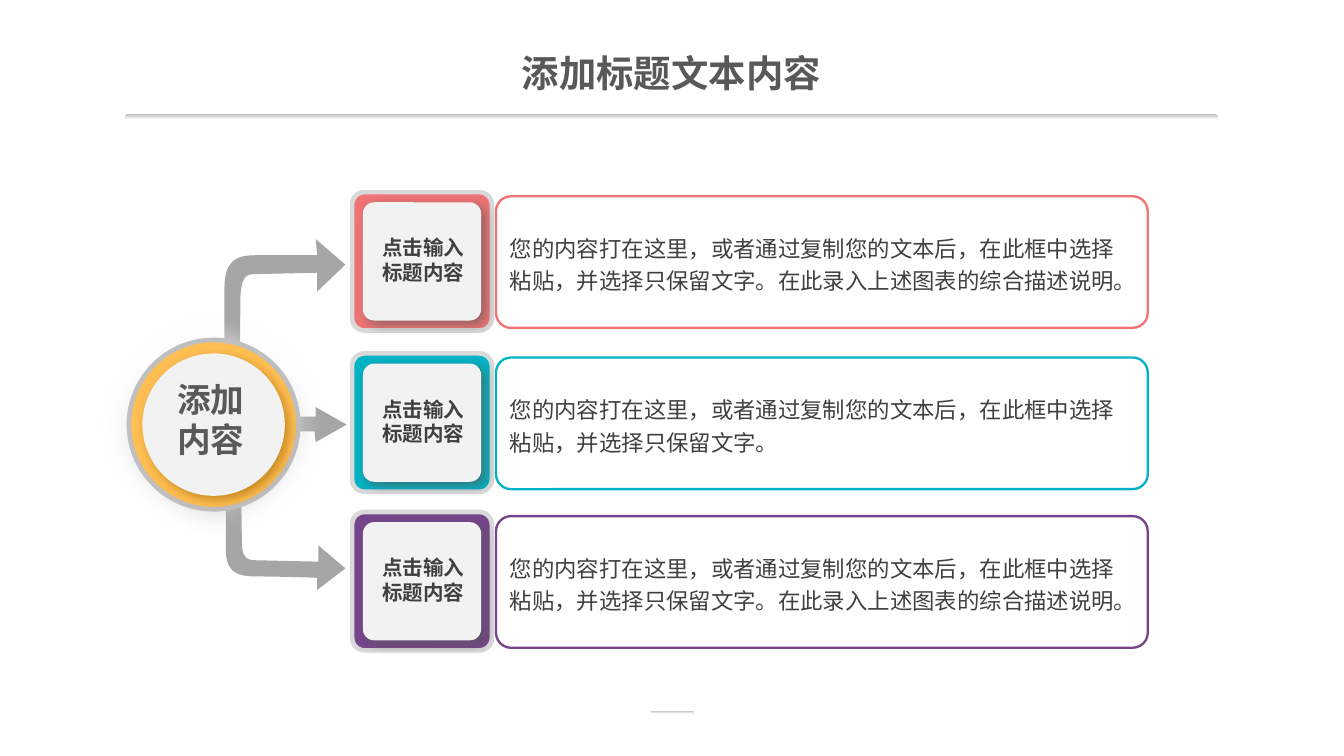
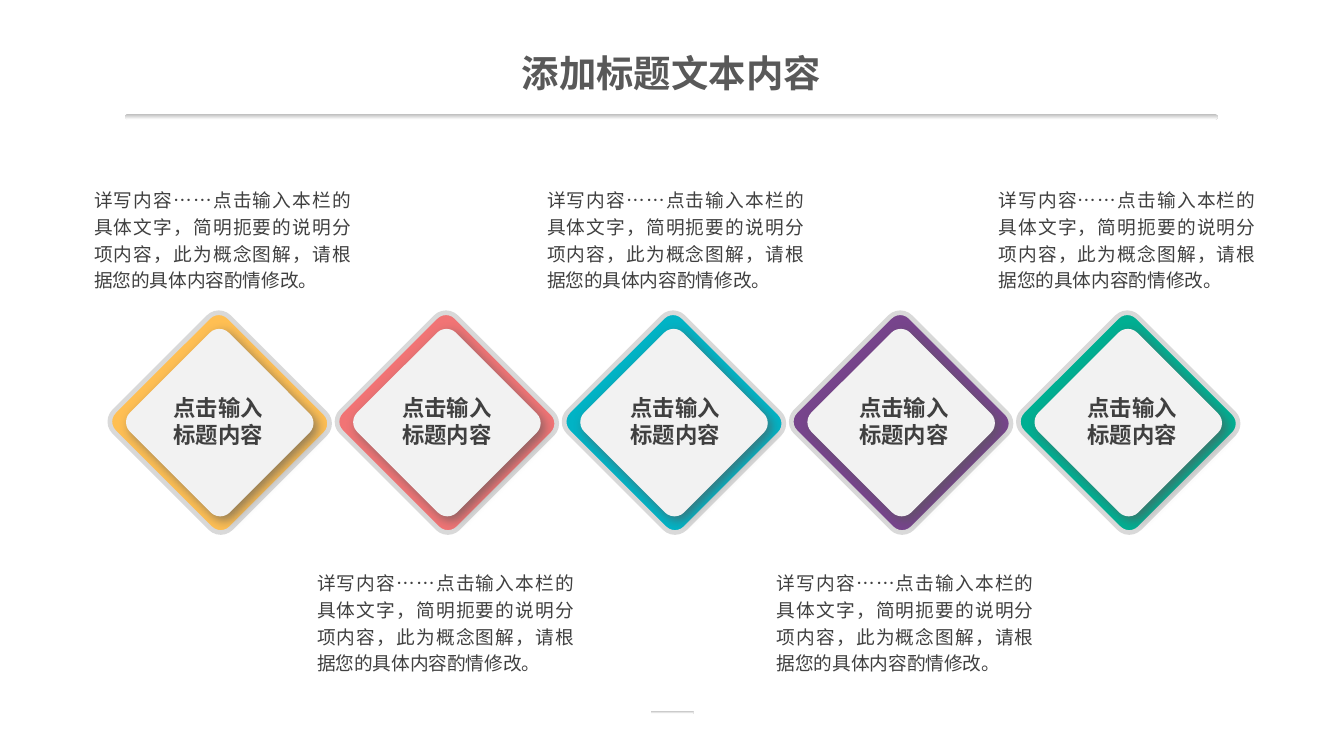
from dataclasses import dataclass

from lxml import etree
from pptx import Presentation
from pptx import util as u
from pptx.dml.color import RGBColor
from pptx.enum import lang, shapes, text
from pptx.oxml import ns


@dataclass(frozen=True)
class Theme:
    white: str = "FFFFFF"
    face: str = "F2F2F2"
    frame: str = "D9D9D9"
    rule: str = "BFBFBF"
    arrow: str = "A6A6A6"
    heading: str = "595959"
    body: str = "404040"
    glow: str = "A96A00"
    yellow: str = "FFBF53"
    red: str = "F17475"
    teal: str = "01B3C5"
    purple: str = "77448C"
    green: str = "00AF92"
    latin: str = "Arial"
    chinese: str = "Noto Sans CJK SC"
    title_size: float = 20
    hub_size: float = 18
    label_size: float = 12
    card_label_size: float = 11
    card_size: float = 12
    note_size: float = 10
    frame_width: float = 2.5
    pane_width: float = 1.25


THEME = Theme()
Inches = u.Inches
ALIGN, ANCHOR = text.PP_ALIGN, text.MSO_ANCHOR
KIND = shapes.MSO_SHAPE

# Content
TITLE = "添加标题文本内容"
LABEL = "点击输入标题内容"
HUB_LINES = ["添加", "内容"]
SHORT_TEXT = "您的内容打在这里，或者通过复制您的文本后，在此框中选择粘贴，并选择只保留文字。"
LONG_TEXT = SHORT_TEXT + "在此录入上述图表的综合描述说明。"
NOTE = "详写内容……点击输入本栏的具体文字，简明扼要的说明分项内容，此为概念图解，请根据您的具体内容酌情修改。"

# Card top, colour, description
CARDS = [
    (1.43, THEME.red, LONG_TEXT),
    (2.63, THEME.teal, SHORT_TEXT),
    (3.81, THEME.purple, LONG_TEXT),
]
# Diamond colour, left edge of its note
DIAMONDS = [
    (THEME.yellow, 0.7),
    (THEME.red, 2.36),
    (THEME.teal, 4.07),
    (THEME.purple, 5.78),
    (THEME.green, 7.43),
]
NOTE_TOPS = (1.37, 4.22)

# Arrow outlines: a pair is a corner, three pairs are a Bézier curve
ARROWS = [
    [(1.79, 3.29), (1.8, 4.03), ((1.8, 4.17), (1.85, 4.17), (1.93, 4.17)),
     (2.37, 4.18), (2.37, 4.06), (2.57, 4.23), (2.36, 4.39), (2.36, 4.3),
     ((2.36, 4.3), (2.07, 4.29), (1.9, 4.29)),
     ((1.73, 4.29), (1.68, 4.23), (1.68, 4.08)),
     (1.68, 3.28), ((1.69, 3.15), (1.76, 3.16), (1.79, 3.29))],
    [(1.51, 3.22), (2.34, 3.21), (2.35, 3.29), (2.58, 3.16), (2.35, 3.03),
     (2.35, 3.1), (1.51, 3.11)],
    [(1.78, 3.06), (1.79, 2.2), ((1.8, 2.04), (1.84, 2.04), (1.92, 2.04)),
     (2.36, 2.03), (2.36, 2.17), (2.57, 1.97), (2.35, 1.78), (2.36, 1.9),
     ((2.36, 1.9), (2.06, 1.9), (1.89, 1.9)),
     ((1.73, 1.9), (1.67, 1.97), (1.67, 2.15)),
     (1.67, 3.08), ((1.69, 3.23), (1.76, 3.21), (1.78, 3.06))],
]


def rgb(colour):
    return RGBColor.from_string(colour)


def style(box, fill=None, line=None, width=0):
    box.shadow.inherit = False
    if fill:
        box.fill.solid()
        box.fill.fore_color.rgb = rgb(fill)
    else:
        box.fill.background()
    if line:
        box.line.color.rgb = rgb(line)
        box.line.width = u.Pt(width)
    else:
        box.line.fill.background()
    return box


def add_box(page, kind, at, fill=None, line=None, width=0, corner=None):
    box = page.shapes.add_shape(kind, *map(Inches, at))
    if corner is not None:
        box.adjustments[0] = corner
    return style(box, fill, line, width)


def add_effect(box, tag, **attributes):
    effects = box._element.spPr.find(ns.qn("a:effectLst"))
    values = {name: str(value) for name, value in attributes.items()}
    return etree.SubElement(effects, ns.qn(tag), values)


def cast_shadow(box, colour):
    shadow = add_effect(box, "a:outerShdw", blurRad=u.Pt(6), dist=u.Pt(3),
                        dir=45 * 60000, algn="tl", rotWithShape=0)
    tint = etree.SubElement(shadow, ns.qn("a:srgbClr"), val=colour)
    etree.SubElement(tint, ns.qn("a:alpha"), val="64000")


def fade_down(box, first, last):
    box.fill.gradient()
    box.fill.gradient_angle = 270
    for stop, colour, position in zip(box.fill.gradient_stops, (first, last), (0, 1)):
        stop.color.rgb = rgb(colour)
        stop.position = position


def write(box, lines, size, colour, bold=False, align=ALIGN.CENTER,
          anchor=ANCHOR.MIDDLE, spacing=None, insets=(0.1, 0.05),
          latin=THEME.chinese):
    frame = box.text_frame
    frame.word_wrap = True
    frame.vertical_anchor = anchor
    frame.margin_left = frame.margin_right = Inches(insets[0])
    frame.margin_top = frame.margin_bottom = Inches(insets[1])
    for index, line in enumerate(lines):
        para = frame.add_paragraph() if index else frame.paragraphs[0]
        para.alignment = align
        if spacing:
            para.line_spacing = spacing
        span = para.add_run()
        span.text = line
        font = span.font
        font.name, font.size, font.bold = latin, u.Pt(size), bold
        font.color.rgb = rgb(colour)
        font.language_id = lang.MSO_LANGUAGE_ID.SIMPLIFIED_CHINESE
        east_asian = etree.SubElement(span._r.get_or_add_rPr(), ns.qn("a:ea"))
        east_asian.set("typeface", THEME.chinese)


def add_text(page, at, lines, size, colour, **options):
    box = page.shapes.add_textbox(*map(Inches, at))
    write(box, lines, size, colour, **options)


def add_page(deck):
    """Blank page with the shared title, rule and footer mark."""
    page = deck.slides.add_slide(deck.slide_layouts[6])
    for at in ((0.93, 0.85, 8.13, 0.04), (4.84, 5.29, 0.32, 0.02)):
        rule = add_box(page, KIND.ROUNDED_RECTANGLE, at, THEME.rule, corner=0.5)
        fade_down(rule, THEME.rule, THEME.white)
    add_text(page, (3.07, 0.33, 3.85, 0.41), [TITLE], THEME.title_size,
             THEME.heading, bold=True, anchor=ANCHOR.TOP, insets=(0.07, 0.04),
             latin=THEME.latin)
    return page


def add_tile(page, at, face_size, colour, rotation=0):
    """Coloured frame with a pale face centred on it."""
    left, top, width, height = at
    face_width, face_height = face_size
    frame = add_box(page, KIND.ROUNDED_RECTANGLE, at, colour, THEME.frame,
                    THEME.frame_width, 0.09)
    face_at = (left + (width - face_width) / 2, top + (height - face_height) / 2,
               face_width, face_height)
    face = add_box(page, KIND.ROUNDED_RECTANGLE, face_at, THEME.face, corner=0.096)
    cast_shadow(face, THEME.heading)
    frame.rotation = face.rotation = rotation


def add_label(page, at, size):
    add_text(page, at, [LABEL], size, THEME.body, bold=True)


def curve(start, controls, steps=10):
    points = (start, *controls)
    for step in range(1, steps + 1):
        t = step / steps
        weights = ((1 - t) ** 3, 3 * t * (1 - t) ** 2, 3 * t * t * (1 - t), t ** 3)
        yield tuple(sum(w * p[axis] for w, p in zip(weights, points))
                    for axis in (0, 1))


def add_arrow(page, outline):
    points = [outline[0]]
    for part in outline[1:]:
        is_curve = isinstance(part[0], tuple)
        points.extend(list(curve(points[-1], part)) if is_curve else [part])
    start, *rest = [(Inches(x), Inches(y)) for x, y in points]
    builder = page.shapes.build_freeform(*start)
    builder.add_line_segments(rest, close=True)
    style(builder.convert_to_shape(), THEME.arrow)


def add_hub(page):
    # Soft halo over the arrow ends
    halo = add_box(page, KIND.OVAL, (0.72, 2.29, 1.74, 1.74), THEME.white)
    fade_down(halo, THEME.white, THEME.rule)
    for tint in halo._element.spPr.iter(ns.qn("a:srgbClr")):
        etree.SubElement(tint, ns.qn("a:alpha"), val="60000")
    add_effect(halo, "a:softEdge", rad=Inches(0.18))
    # Ring, face and caption
    add_box(page, KIND.OVAL, (0.96, 2.53, 1.26, 1.26), THEME.yellow, THEME.rule,
            THEME.frame_width)
    face = add_box(page, KIND.OVAL, (1.06, 2.63, 1.06, 1.06), THEME.face)
    cast_shadow(face, THEME.glow)
    add_text(page, (1.05, 2.77, 1.04, 0.71), HUB_LINES, THEME.hub_size,
             THEME.heading, bold=True, anchor=ANCHOR.TOP, latin=THEME.latin)


def build_branches(deck):
    page = add_page(deck)
    for outline in ARROWS:
        add_arrow(page, outline)
    add_hub(page)
    for top, colour, description in CARDS:
        pane = add_box(page, KIND.ROUNDED_RECTANGLE, (3.69, top + 0.03, 4.85, 0.98),
                       line=colour, width=THEME.pane_width, corner=0.115)
        write(pane, [description], THEME.card_size, THEME.body, align=ALIGN.LEFT,
              spacing=1.2, insets=(0.07, 0.03))
        add_tile(page, (2.62, top, 1.04, 1.03), (0.88, 0.88), colour)
        add_label(page, (2.73, top + 0.41, 0.84, 0.19), THEME.card_label_size)


def build_diamonds(deck):
    page = add_page(deck)
    for index, (colour, note_left) in enumerate(DIAMONDS):
        add_tile(page, (1.02 + 1.69 * index, 2.54, 1.23, 1.21), (1.05, 1.04),
                 colour, rotation=45)
        add_label(page, (1.13 + 1.7 * index, 3.02, 0.99, 0.22), THEME.label_size)
        # Notes alternate above and below the row
        add_text(page, (note_left, NOTE_TOPS[index % 2], 1.91, 0.81), [NOTE],
                 THEME.note_size, THEME.body, align=ALIGN.JUSTIFY,
                 anchor=ANCHOR.TOP, spacing=1.2, insets=(0, 0))


def main():
    deck = Presentation()
    deck.slide_width = Inches(10)
    deck.slide_height = deck.slide_width * 9 // 16
    build_branches(deck)
    build_diamonds(deck)
    deck.save("out.pptx")


if __name__ == "__main__":
    main()
